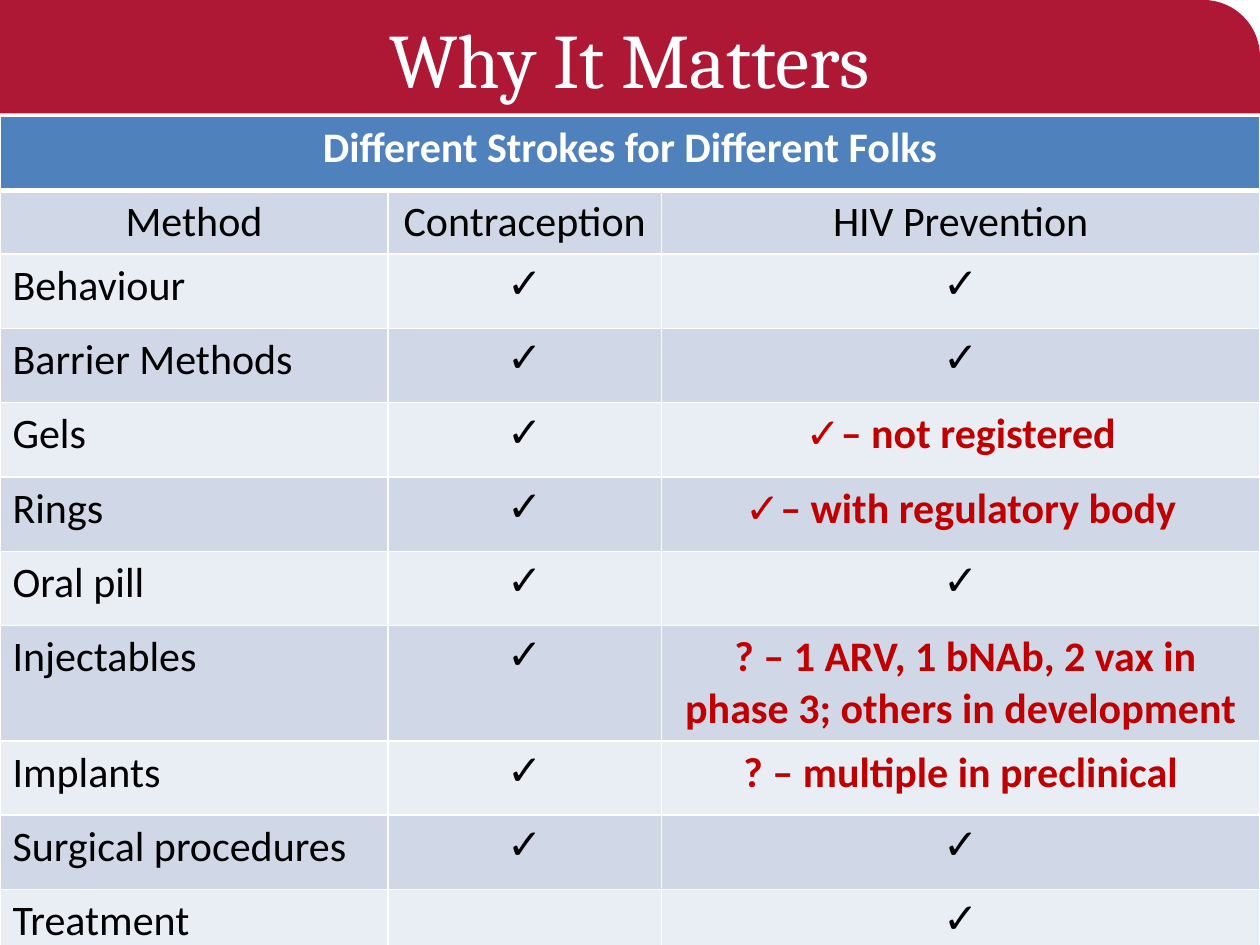
"""Build a slide comparing methods for contraception and HIV prevention."""
from lxml.etree import SubElement
from pptx import Presentation
from pptx.dml.color import RGBColor
from pptx.enum.shapes import MSO_SHAPE
from pptx.enum.text import MSO_ANCHOR, PP_ALIGN
from pptx.oxml.ns import qn
from pptx.util import Inches, Pt

CRIMSON = RGBColor(0xAE, 0x18, 0x35)
HEADER_BLUE = RGBColor(0x4F, 0x81, 0xBD)
BAND_DARK = RGBColor(0xD0, 0xD8, 0xE8)
BAND_LIGHT = RGBColor(0xE9, 0xED, 0xF4)
ALERT_RED = RGBColor(0xC0, 0x00, 0x00)
BLACK = RGBColor(0, 0, 0)
WHITE = RGBColor(0xFF, 0xFF, 0xFF)

TICK = "✓"
HEADING = "Different Strokes for Different Folks"
COLUMN_WIDTHS = [3.08, 2.17, 4.75]
ROW_HEIGHT = 0.59
SPECIAL_HEIGHTS = {"Method": 0.49, "Injectables": 0.88}
ROWS = [
    ("Method", "Contraception", "HIV Prevention"),
    ("Behaviour", TICK, TICK),
    ("Barrier Methods", TICK, TICK),
    ("Gels", TICK, "✓– not registered"),
    ("Rings", TICK, "✓– with regulatory body"),
    ("Oral pill", TICK, TICK),
    ("Injectables", TICK, " ? – 1 ARV, 1 bNAb, 2 vax in phase 3; others in development"),
    ("Implants", TICK, "? – multiple in preclinical"),
    ("Surgical procedures", TICK, TICK),
    ("Treatment", "", TICK),
]


def write(paragraph, text, font="Calibri", size=24, color=BLACK, bold=False, align=PP_ALIGN.CENTER):
    paragraph.alignment = align
    run = paragraph.add_run()
    run.text = text
    run.font.name = font
    run.font.size = Pt(size)
    run.font.color.rgb = color
    run.font.bold = bold


class SlideBuilder:
    def __init__(self, slide):
        self.slide = slide
        self.border_color = WHITE

    def title(self, text):
        title = self.slide.shapes.title
        title.left, title.top = Inches(0), Inches(0)
        title.width, title.height = Inches(10), Inches(0.92)
        title.text_frame.vertical_anchor = MSO_ANCHOR.MIDDLE
        write(title.text_frame.paragraphs[0], text, font="Cambria", size=44, color=WHITE)

    def banner(self):
        banner = self.slide.shapes.add_shape(
            MSO_SHAPE.ROUND_1_RECTANGLE, Inches(0), Inches(0), Inches(10), Inches(0.9))
        banner.adjustments[0] = 0.5
        banner.shadow.inherit = False
        banner.fill.solid()
        banner.fill.fore_color.rgb = CRIMSON
        banner.line.fill.background()
        self.slide.shapes.title.element.addprevious(banner.element)

    def table(self, heights):
        frame = self.slide.shapes.add_table(
            len(heights), len(COLUMN_WIDTHS), Inches(0), Inches(0.92), Inches(10), Inches(sum(heights)))
        table = frame.table
        table.first_row = table.horz_banding = False
        for column, width in zip(table.columns, COLUMN_WIDTHS):
            column.width = Inches(width)
        for row, height in zip(table.rows, heights):
            row.height = Inches(height)
        return table

    def cell(self, cell, fill, top=1, bottom=1):
        properties = cell._tc.get_or_add_tcPr()
        for side, width in (("L", 1), ("R", 1), ("T", top), ("B", bottom)):
            border = SubElement(properties, qn(f"a:ln{side}"), w=str(Pt(width)))
            paint = SubElement(border, qn("a:solidFill"))
            SubElement(paint, qn("a:srgbClr"), val=str(self.border_color))
        cell.fill.solid()
        cell.fill.fore_color.rgb = fill
        return cell.text_frame.paragraphs[0]

    def status(self, paragraph, text):
        if text in ("", TICK):
            write(paragraph, text, font="Arial")
            return
        if text.startswith(TICK):
            write(paragraph, TICK, font="Arial", color=ALERT_RED, bold=True)
        write(paragraph, text.removeprefix(TICK), color=ALERT_RED, bold=True)


def main():
    presentation = Presentation()
    presentation.slide_width, presentation.slide_height = Inches(10), Inches(7.5)
    builder = SlideBuilder(presentation.slides.add_slide(presentation.slide_layouts[5]))
    builder.title("Why It Matters")
    builder.banner()

    heights = [ROW_HEIGHT] + [SPECIAL_HEIGHTS.get(row[0], ROW_HEIGHT) for row in ROWS]
    methods = builder.table(heights)
    for column in range(len(COLUMN_WIDTHS)):
        heading = builder.cell(methods.cell(0, column), HEADER_BLUE, bottom=3)
        if column == 0:
            write(heading, HEADING, color=WHITE, bold=True)
    methods.cell(0, 0).merge(methods.cell(0, len(COLUMN_WIDTHS) - 1))

    for index, row in enumerate(ROWS, start=1):
        band = BAND_DARK if index % 2 else BAND_LIGHT
        for column, text in enumerate(row):
            entry = builder.cell(methods.cell(index, column), band, top=3 if index == 1 else 1)
            if index == 1:
                write(entry, text)
            elif column == 0:
                write(entry, text, align=PP_ALIGN.LEFT)
            else:
                builder.status(entry, text)
    presentation.save("out.pptx")


if __name__ == "__main__":
    main()
